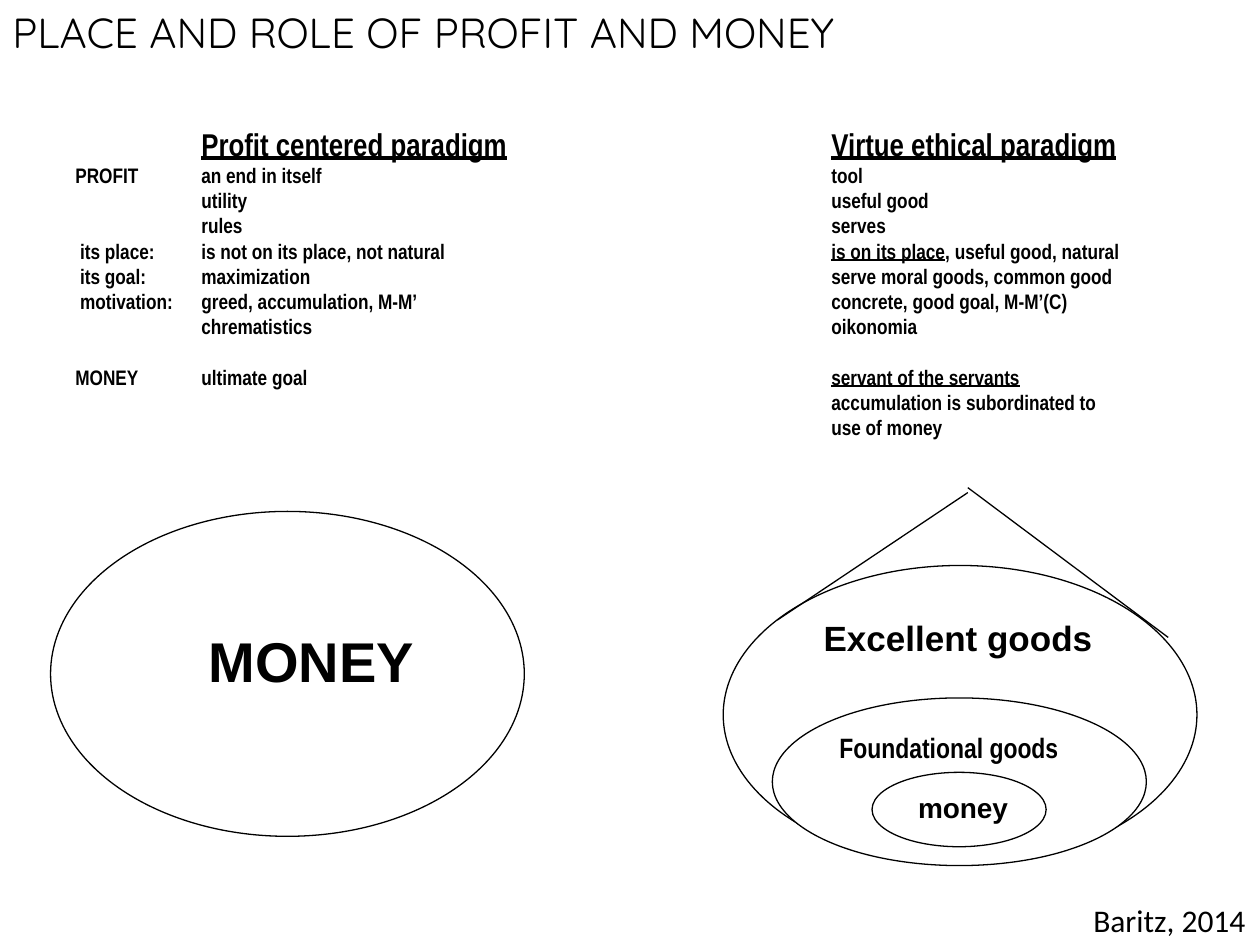
from lxml import etree
from pptx import Presentation
from pptx.dml.color import RGBColor
from pptx.enum.shapes import MSO_CONNECTOR, MSO_SHAPE
from pptx.enum.text import MSO_ANCHOR, PP_ALIGN
from pptx.oxml.ns import qn
from pptx.util import Cm, Pt

ELLIPSE, STRAIGHT = MSO_SHAPE.OVAL, MSO_CONNECTOR.STRAIGHT
MIDDLE, CENTER = MSO_ANCHOR.MIDDLE, PP_ALIGN.CENTER
COLORS = {"ink": "000000", "paper": "FFFFFF"}

TITLE = "PLACE AND ROLE OF PROFIT AND MONEY"
CREDIT = "Baritz, 2014"

# Comparison rows: label, profit paradigm, virtue paradigm (underlined part, rest)
HEADINGS = ("Profit centered paradigm", "Virtue ethical paradigm")
ROWS = [
    ("PROFIT", "an end in itself", "", "tool"),
    ("", "utility", "", "useful good"),
    ("", "rules", "", "serves"),
    (" its place:", "is not on its place, not natural", "is on its place", ", useful good, natural"),
    (" its goal:", "maximization", "", "serve moral goods, common good"),
    (" motivation:", "greed, accumulation, M-M’", "", "concrete, good goal, M-M’(C)"),
    ("", "chrematistics", "", "oikonomia"),
    ("MONEY", "ultimate goal", "servant of the servants", ""),
    ("", "", "", "accumulation is subordinated to"),
    ("", "", "", "use of money"),
]
TAB_STOPS = (2.54, 15.24)
SECTION_GAP = Pt(14.4)

# Ellipses: text, font, size, box (left, top, width, height), text offset from centre; all cm
ELLIPSES = [
    ("MONEY", "Arial", 32, (1.02, 10.31, 9.55, 6.55), (0.48, -0.28)),
    ("Excellent goods", "Arial", 20, (14.58, 11.4, 9.55, 6.02), (-0.04, -1.55)),
    ("Foundational goods", "Arial Narrow", 16, (15.57, 14.07, 7.54, 3.38), (-0.21, -0.7)),
    ("money", "Arial", 16, (17.58, 15.57, 3.51, 1.5), (0.08, -0.05)),
]
# Roof lines above the goods: start x, y, end x, y
ROOF = [(15.67, 12.5, 19.51, 9.93), (23.55, 12.85, 19.51, 9.83)]


def color(name):
    return RGBColor.from_string(COLORS[name])


def style(font, name, size, bold=False):
    font.name, font.size, font.bold = name, Pt(size), bold
    font.color.rgb = color("ink")


def add_text(slide, box, wrap=True):
    frame = slide.shapes.add_textbox(*map(Cm, box)).text_frame
    frame.word_wrap = wrap
    return frame


def add_line_of_text(slide, box, text, font, size, wrap=True):
    paragraph = add_text(slide, box, wrap).paragraphs[0]
    paragraph.text = text
    style(paragraph.font, font, size)


def set_tab_stops(paragraph):
    properties = paragraph._p.get_or_add_pPr()
    tabs = etree.Element(qn("a:tabLst"))
    for stop in TAB_STOPS:
        etree.SubElement(tabs, qn("a:tab"), pos=str(Cm(stop)), algn="l")
    defaults = properties.find(qn("a:defRPr"))
    defaults.addprevious(tabs)


def add_runs(paragraph, parts, size):
    for text, underlined in parts:
        if text:
            run = paragraph.add_run()
            run.text = text
            if underlined:
                run.font.underline = True
    style(paragraph.font, "Arial Narrow", size, bold=True)
    set_tab_stops(paragraph)


def add_comparison(slide):
    frame = add_text(slide, (1.27, 2.39, 24.13, 10.06))
    first, second = HEADINGS
    add_runs(frame.paragraphs[0],
             [("\t", False), (first, True), ("\t", False), (second, True)], 18)
    for label, profit, marked, virtue in ROWS:
        paragraph = frame.add_paragraph()
        if label == "MONEY":
            paragraph.space_before = SECTION_GAP
        add_runs(paragraph, [(f"{label}\t{profit}\t", False), (marked, True), (virtue, False)], 12)


def add_ellipse(slide, text, font, size, box, offset):
    shape = slide.shapes.add_shape(ELLIPSE, *map(Cm, box))
    shape.shadow.inherit = False
    shape.fill.solid()
    shape.fill.fore_color.rgb = color("paper")
    shape.line.color.rgb = color("ink")
    shape.line.width = Pt(0.75)
    frame = shape.text_frame
    frame.word_wrap = False
    frame.vertical_anchor = MIDDLE
    # An inset of twice the offset moves centred text by the offset
    across, down = offset
    frame.margin_left, frame.margin_right = Cm(max(0, 2 * across)), Cm(max(0, -2 * across))
    frame.margin_top, frame.margin_bottom = Cm(max(0, 2 * down)), Cm(max(0, -2 * down))
    paragraph = frame.paragraphs[0]
    paragraph.text = text
    paragraph.alignment = CENTER
    style(paragraph.font, font, size, bold=True)


def add_roof_line(slide, points):
    line = slide.shapes.add_connector(STRAIGHT, *map(Cm, points))
    line.line.color.rgb = color("ink")
    line.line.width = Pt(0.75)
    etree.SubElement(line._element.spPr, qn("a:effectLst"))


def main():
    presentation = Presentation()
    presentation.slide_width, presentation.slide_height = Cm(25.4), Cm(19.05)
    slide = presentation.slides.add_slide(presentation.slide_layouts[6])

    # Title and comparison
    add_line_of_text(slide, (0, 0, 25.12, 1.3), TITLE, "Quicksand", 24)
    add_comparison(slide)

    # Diagrams
    for ellipse in ELLIPSES:
        add_ellipse(slide, *ellipse)
    for points in ROOF:
        add_roof_line(slide, points)

    # Credit
    add_line_of_text(slide, (21.79, 18.03, 3.61, 1.02), CREDIT, "Calibri", 18, wrap=False)
    presentation.save("out.pptx")


if __name__ == "__main__":
    main()
